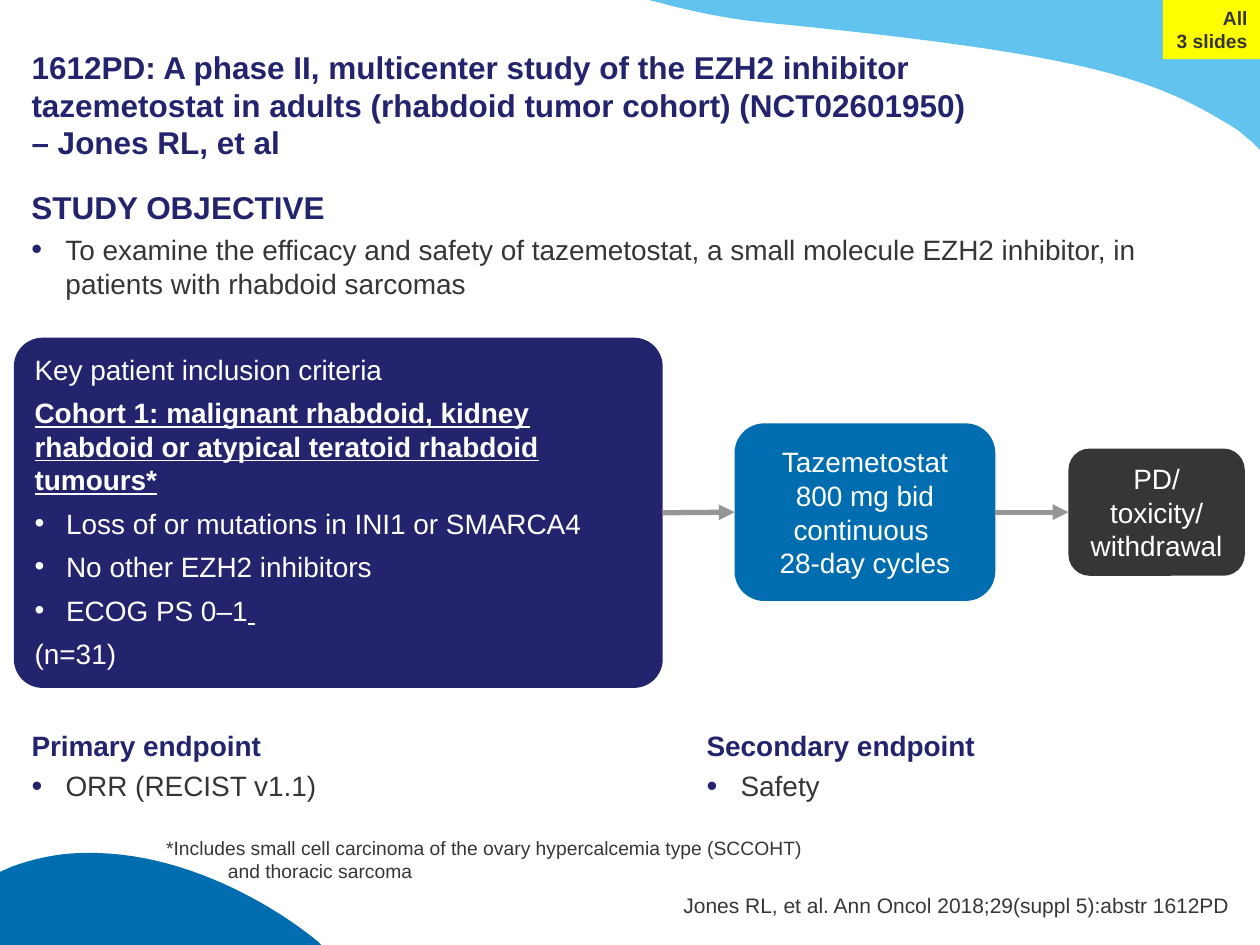
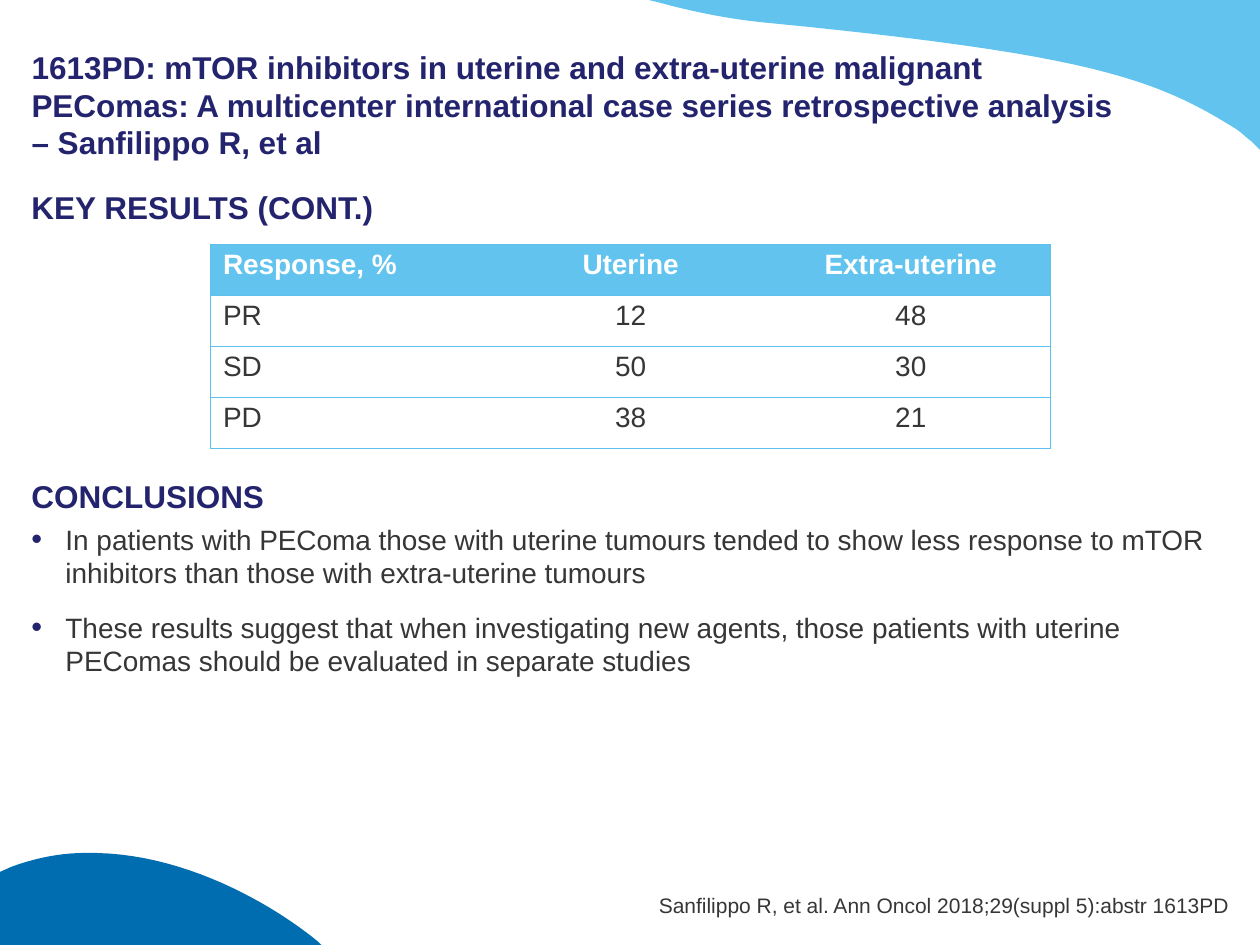
from copy import deepcopy
from dataclasses import dataclass, replace
from typing import NamedTuple

from lxml.etree import SubElement
from pptx import Presentation
from pptx.dml.color import RGBColor
from pptx.enum.shapes import MSO_CONNECTOR, MSO_SHAPE
from pptx.enum.text import MSO_ANCHOR, MSO_AUTO_SIZE, PP_ALIGN
from pptx.oxml.ns import qn
from pptx.util import Inches, Pt


@dataclass(frozen=True)
class Theme:
    font: str = "Arial"
    navy: str = "23246D"
    blue: str = "006DB0"
    sky: str = "62C4EE"
    table_line: str = "5CC1EC"
    ink: str = "363636"
    grey: str = "969696"
    white: str = "FFFFFF"
    yellow: str = "FFFF00"
    title_size: float = 18
    body_size: float = 16
    citation_size: float = 12
    note_size: float = 11


THEME = Theme()


@dataclass(frozen=True)
class Style:
    size: float = THEME.body_size
    colour: str = THEME.ink
    bold: bool = False
    underline: bool = False
    align: PP_ALIGN = PP_ALIGN.LEFT
    before: float = 0
    after: float = 0
    hang: float = 0
    bullet_colour: str = ""
    bullet_percent: int = 100


class Line(NamedTuple):
    text: str
    style: Style


class Frame(NamedTuple):
    left: float
    top: float
    width: float
    height: float

    def emu(self) -> list:
        return [Inches(value) for value in self]


@dataclass(frozen=True)
class Layout:
    insets: tuple = (0.1, 0.05, 0.1, 0.05)
    anchor: MSO_ANCHOR = MSO_ANCHOR.TOP
    wrap: bool = True


@dataclass(frozen=True)
class Box:
    frame: Frame
    fill: str
    lines: list
    layout: Layout = Layout()
    kind: MSO_SHAPE = MSO_SHAPE.ROUNDED_RECTANGLE
    corner: float = 0.167


@dataclass(frozen=True)
class Wave:
    """An outline; a segment of one point is a line, of three a Bézier curve."""
    fill: str
    start: tuple
    segments: list


TITLE = Style(THEME.title_size, THEME.navy, bold=True)
HEADING = replace(TITLE, after=4)
SUBHEADING = replace(HEADING, size=THEME.body_size)
BULLET = Style(after=4, hang=0.27, bullet_colour=THEME.navy, bullet_percent=110)
CONCLUSION = replace(BULLET, after=12)
CITATION = Style(THEME.citation_size, align=PP_ALIGN.RIGHT)
TAG = Style(THEME.note_size, bold=True, align=PP_ALIGN.RIGHT)
FOOTNOTE = Style(THEME.note_size, hang=0.49)
STEP = Style(colour=THEME.white, align=PP_ALIGN.CENTER)
CRITERION = Style(colour=THEME.white, after=5.6)
COHORT = replace(CRITERION, bold=True, underline=True)
CRITERION_BULLET = replace(CRITERION, hang=0.25, bullet_colour=THEME.white)

FLUSH = Layout((0, 0.05, 0, 0.05))
TITLE_LAYOUT = Layout((0, 0.05, 0, 0), MSO_ANCHOR.BOTTOM)
CITATION_LAYOUT = Layout((0, 0, 0, 0), MSO_ANCHOR.BOTTOM, wrap=False)
STEP_LAYOUT = Layout((0.1, 0, 0.1, 0), MSO_ANCHOR.MIDDLE)
UNWRAPPED = Layout(wrap=False)

BODY_FRAME = Frame(0.25, 1.44, 9.5, 5.81)

WAVES = [
    Wave(THEME.sky, (5.15, 0), [
        [(10, 0)], [(10, 1.19)], [(9.93, 1.12)],
        [(9.89, 1.09), (9.86, 1.06), (9.82, 1.03)],
        [(9.17, 0.62), (8.64, 0.43), (6.08, 0.18)],
        [(5.77, 0.15), (5.49, 0.09), (5.23, 0.02)],
    ]),
    Wave(THEME.blue, (0.67, 6.77), [
        [(1.45, 6.75), (2.18, 7.19), (2.52, 7.47)],
        [(2.55, 7.5)], [(0, 7.5)], [(0, 6.92)], [(0.09, 6.88)],
        [(0.28, 6.81), (0.48, 6.77), (0.67, 6.77)],
    ]),
]


def rgb(colour: str) -> RGBColor:
    return RGBColor.from_string(colour)


def format_run(run, style: Style) -> None:
    run.font.name = THEME.font
    run.font.size = Pt(style.size)
    run.font.bold = style.bold
    run.font.underline = style.underline
    run.font.color.rgb = rgb(style.colour)


def write_paragraph(paragraph, line: Line) -> None:
    style = line.style
    paragraph.text = line.text
    paragraph.alignment = style.align
    paragraph.space_before = Pt(style.before)
    paragraph.space_after = Pt(style.after)
    for run in paragraph.runs:
        format_run(run, style)
    for line_break in paragraph._p.findall(qn("a:br")):
        line_break.insert(0, deepcopy(paragraph.runs[0]._r.rPr))
    if style.hang:
        properties = paragraph._p.get_or_add_pPr()
        properties.set("marL", str(Inches(style.hang)))
        properties.set("indent", str(-Inches(style.hang)))
        if style.bullet_colour:
            tint = SubElement(properties, qn("a:buClr"))
            SubElement(tint, qn("a:srgbClr"), val=style.bullet_colour)
            SubElement(properties, qn("a:buSzPct"), val=str(style.bullet_percent * 1000))
            SubElement(properties, qn("a:buFont"), typeface=THEME.font)
            SubElement(properties, qn("a:buChar"), char="•")


def write_lines(text_frame, lines: list, layout: Layout) -> None:
    text_frame.auto_size = MSO_AUTO_SIZE.NONE
    text_frame.word_wrap = layout.wrap
    text_frame.vertical_anchor = layout.anchor
    (text_frame.margin_left, text_frame.margin_top,
     text_frame.margin_right, text_frame.margin_bottom) = map(Inches, layout.insets)
    for index, line in enumerate(lines):
        paragraph = text_frame.add_paragraph() if index else text_frame.paragraphs[0]
        write_paragraph(paragraph, line)


def add_text(slide, frame: Frame, lines: list, layout: Layout = Layout()) -> None:
    write_lines(slide.shapes.add_textbox(*frame.emu()).text_frame, lines, layout)


def paint(shape, colour: str) -> None:
    shape.fill.solid()
    shape.fill.fore_color.rgb = rgb(colour)
    shape.line.fill.background()
    shape.shadow.inherit = False


def add_box(slide, box: Box):
    shape = slide.shapes.add_shape(box.kind, *box.frame.emu())
    paint(shape, box.fill)
    if box.kind == MSO_SHAPE.ROUNDED_RECTANGLE:
        shape.adjustments[0] = box.corner
    write_lines(shape.text_frame, box.lines, box.layout)
    return shape


def add_arrow(slide, source, target) -> None:
    arrow = slide.shapes.add_connector(MSO_CONNECTOR.STRAIGHT, 0, 0, 0, 0)
    arrow.begin_connect(source, 3)
    arrow.end_connect(target, 1)
    arrow.line.color.rgb = rgb(THEME.grey)
    arrow.line.width = Pt(3)
    SubElement(arrow.line._get_or_add_ln(), qn("a:tailEnd"), type="triangle")
    SubElement(arrow.element.spPr, qn("a:effectLst"))


def curve_points(start: tuple, control_1: tuple, control_2: tuple, end: tuple) -> list:
    steps = 24
    points = []
    for t in (step / steps for step in range(1, steps + 1)):
        weights = ((1 - t) ** 3, 3 * t * (1 - t) ** 2, 3 * t * t * (1 - t), t ** 3)
        corners = (start, control_1, control_2, end)
        points.append(tuple(sum(w * c[axis] for w, c in zip(weights, corners))
                            for axis in (0, 1)))
    return points


def add_waves_to_master(presentation, slide) -> None:
    """Draw the waves on a slide, then hand them to the master that all slides share."""
    for number, wave in enumerate(WAVES):
        points = [wave.start]
        for segment in wave.segments:
            points += segment if len(segment) == 1 else curve_points(points[-1], *segment)
        outline = [(Inches(x), Inches(y)) for x, y in points]
        builder = slide.shapes.build_freeform(*outline[0])
        builder.add_line_segments(outline[1:], close=True)
        shape = builder.convert_to_shape()
        paint(shape, wave.fill)
        shape.element.nvSpPr.cNvPr.set("id", str(100 + number))
        presentation.slide_master.shapes.element.append(shape.element)


def add_study_slide(presentation, title: str, title_width: float,
                    body: list, citation: str, citation_left: float):
    slide = presentation.slides.add_slide(presentation.slide_layouts.get_by_name("Title Only"))
    heading = slide.shapes.title
    heading.left, heading.top, heading.width, heading.height = Frame(
        0.25, 0.25, title_width, 1.03).emu()
    write_lines(heading.text_frame, [Line(title, TITLE)], TITLE_LAYOUT)
    add_text(slide, BODY_FRAME, body, FLUSH)
    add_text(slide, Frame(citation_left, 7.08, 9.76 - citation_left, 0.2),
             [Line(citation, CITATION)], CITATION_LAYOUT)
    return slide


def set_borders(cell, visible: dict) -> None:
    """Rule the sides (L, R, T, B) marked True and clear the others."""
    properties = cell._tc.get_or_add_tcPr()
    for position, (side, shown) in enumerate(visible.items()):
        border = SubElement(properties, qn(f"a:ln{side}"), w=str(Pt(0.75)))
        if shown:
            SubElement(SubElement(border, qn("a:solidFill")),
                       qn("a:srgbClr"), val=THEME.table_line)
        else:
            SubElement(border, qn("a:noFill"))
        properties.insert(position, border)


def add_response_table(slide, frame: Frame, rows: list) -> None:
    last = len(rows[0]) - 1
    table = slide.shapes.add_table(len(rows), last + 1, *frame.emu()).table
    table.horz_banding = False
    for r, row in enumerate(rows):
        table.rows[r].height = Inches(frame.height / len(rows))
        for c, text in enumerate(row):
            cell = table.cell(r, c)
            cell.fill.solid()
            cell.fill.fore_color.rgb = rgb(THEME.white if r else THEME.sky)
            cell.margin_top = cell.margin_bottom = Inches(0.04)
            style = Style(colour=THEME.ink if r else THEME.white, bold=r == 0,
                          align=PP_ALIGN.CENTER if c else PP_ALIGN.LEFT)
            write_paragraph(cell.text_frame.paragraphs[0], Line(text, style))
            set_borders(cell, {"L": c == 0, "R": c == last, "T": True, "B": True})


def build_objective_slide(presentation):
    slide = add_study_slide(
        presentation,
        "1612PD: A phase II, multicenter study of the EZH2 inhibitor tazemetostat in adults "
        "(rhabdoid tumor cohort) (NCT02601950) \n– Jones RL, et al", 8.1,
        [Line("STUDY OBJECTIVE", HEADING),
         Line("To examine the efficacy and safety of tazemetostat, a small molecule EZH2 "
              "inhibitor, in patients with rhabdoid sarcomas", BULLET)],
        "Jones RL, et al. Ann Oncol 2018;29(suppl 5):abstr 1612PD", 5.39)
    add_box(slide, Box(Frame(9.23, 0, 0.77, 0.47), THEME.yellow,
                       [Line("All", TAG), Line("3 slides", TAG)],
                       UNWRAPPED, MSO_SHAPE.RECTANGLE))
    criteria = add_box(slide, Box(Frame(0.11, 2.68, 5.15, 2.78), THEME.navy, [
        Line("Key patient inclusion criteria", CRITERION),
        Line("Cohort 1: malignant rhabdoid, kidney rhabdoid or atypical teratoid "
             "rhabdoid tumours*", COHORT),
        Line("Loss of or mutations in INI1 or SMARCA4", CRITERION_BULLET),
        Line("No other EZH2 inhibitors", CRITERION_BULLET),
        Line("ECOG PS 0–1", CRITERION_BULLET),
        Line("(n=31)", CRITERION)], corner=0.082))
    underlined_space = criteria.text_frame.paragraphs[4].add_run()
    underlined_space.text = " "
    format_run(underlined_space, COHORT)
    treatment = add_box(slide, Box(
        Frame(5.83, 3.36, 2.07, 1.41), THEME.blue,
        [Line("Tazemetostat 800 mg bid continuous \n28-day cycles", STEP)], STEP_LAYOUT))
    stopping = add_box(slide, Box(Frame(8.48, 3.56, 1.4, 1.01), THEME.ink,
                                  [Line("PD/\ntoxicity/\nwithdrawal", STEP)], STEP_LAYOUT))
    add_arrow(slide, criteria, treatment)
    add_arrow(slide, treatment, stopping)
    add_text(slide, Frame(0.25, 5.73, 4.95, 0.77),
             [Line("Primary endpoint", SUBHEADING), Line("ORR (RECIST v1.1)", BULLET)], FLUSH)
    add_text(slide, Frame(5.51, 5.73, 4.04, 0.92),
             [Line("Secondary endpoint", SUBHEADING), Line("Safety", BULLET)])
    add_text(slide, Frame(1.22, 6.59, 5.37, 0.47),
             [Line("*Includes small cell carcinoma of the ovary hypercalcemia type (SCCOHT) "
                   "\nand thoracic sarcoma", FOOTNOTE)], UNWRAPPED)
    return slide


def build_results_slide(presentation) -> None:
    slide = add_study_slide(
        presentation,
        "1613PD: mTOR inhibitors in uterine and extra-uterine malignant PEComas: A multicenter "
        "international case series retrospective analysis – Sanfilippo R, et al", 8.71,
        [Line("KEY RESULTS (CONT.)", HEADING),
         Line("CONCLUSIONS", replace(HEADING, before=140)),
         Line("In patients with PEComa those with uterine tumours tended to show less response "
              "to mTOR inhibitors than those with extra-uterine tumours", CONCLUSION),
         Line("These results suggest that when investigating new agents, those patients with "
              "uterine PEComas should be evaluated in separate studies", CONCLUSION)],
        "Sanfilippo R, et al. Ann Oncol 2018;29(suppl 5):abstr 1613PD", 5.2)
    add_response_table(slide, Frame(1.67, 1.94, 6.67, 1.62), [
        ("Response, %", "Uterine", "Extra-uterine"),
        ("PR", "12", "48"),
        ("SD", "50", "30"),
        ("PD", "38", "21")])


def main() -> None:
    presentation = Presentation()
    presentation.slide_width, presentation.slide_height = Inches(10), Inches(7.5)
    add_waves_to_master(presentation, build_objective_slide(presentation))
    build_results_slide(presentation)
    presentation.save("out.pptx")


if __name__ == "__main__":
    main()
